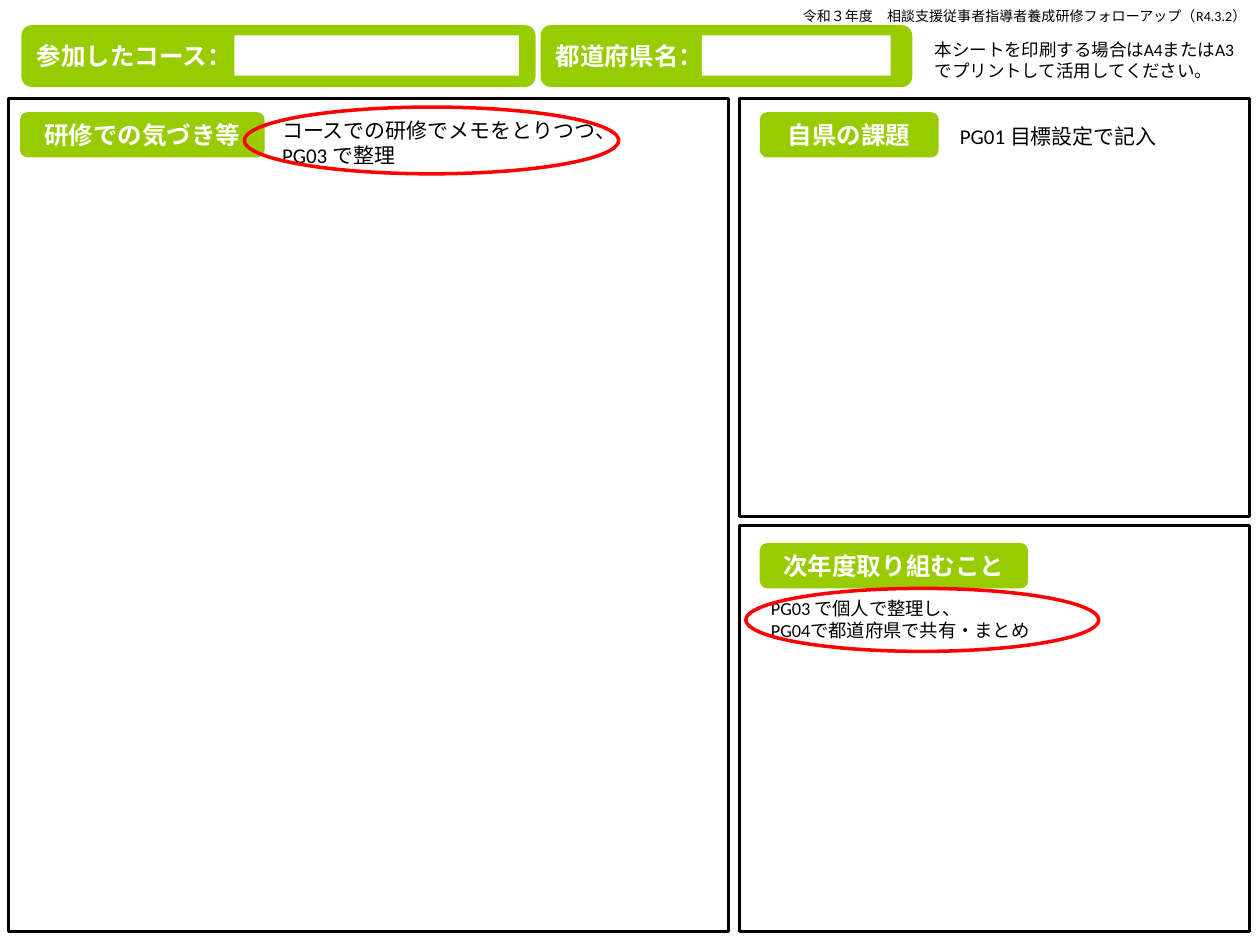
from pptx import Presentation
from pptx.dml.color import RGBColor
from pptx.enum.shapes import MSO_SHAPE as Shape
from pptx.enum.text import MSO_ANCHOR as Anchor, PP_ALIGN as Align
from pptx.util import Inches, Pt

BLACK = RGBColor(0x00, 0x00, 0x00)
WHITE = RGBColor(0xFF, 0xFF, 0xFF)
GREEN = RGBColor(0x99, 0xCC, 0x00)
RED = RGBColor(0xFF, 0x00, 0x00)
FONT = "Calibri"


def write_text(frame, text, size=12, color=BLACK, bold=False,
               align=Align.LEFT, anchor=Anchor.TOP):
    """Fill a text frame, one paragraph per line of text."""
    frame.word_wrap = True
    frame.vertical_anchor = anchor
    for index, line in enumerate(text.split("\n")):
        paragraph = frame.add_paragraph() if index else frame.paragraphs[0]
        paragraph.alignment = align
        run = paragraph.add_run()
        run.text = line
        run.font.name = FONT
        run.font.size = Pt(size)
        run.font.bold = bold
        run.font.color.rgb = color


class Worksheet:
    """Holds the current slide and draws its elements in one style."""

    def __init__(self, slide):
        self.slide = slide

    def shape(self, kind, box, fill=None, line=None, width=1):
        shape = self.slide.shapes.add_shape(kind, *map(Inches, box))
        shape.shadow.inherit = False
        if fill is None:
            shape.fill.background()
        else:
            shape.fill.solid()
            shape.fill.fore_color.rgb = fill
        if line is None:
            shape.line.fill.background()
        else:
            shape.line.color.rgb = line
            shape.line.width = Pt(width)
        return shape

    def panel(self, *box):
        self.shape(Shape.RECTANGLE, box, line=BLACK, width=1.75)

    def label(self, text, *box, align=Align.CENTER):
        shape = self.shape(Shape.ROUNDED_RECTANGLE, box, fill=GREEN)
        write_text(shape.text_frame, text, size=14, color=WHITE, bold=True,
                   align=align, anchor=Anchor.MIDDLE)

    def entry_field(self, text, left, width, blank_left, blank_width):
        """Green bar with a caption and a white blank to fill in."""
        self.label(text, left, 0.2, width, 0.49, align=Align.LEFT)
        self.shape(Shape.RECTANGLE, (blank_left, 0.28, blank_width, 0.32),
                   fill=WHITE)

    def note(self, text, *box, **text_format):
        text_box = self.slide.shapes.add_textbox(*map(Inches, box))
        write_text(text_box.text_frame, text, **text_format)

    def highlight(self, *box):
        self.shape(Shape.OVAL, box, line=RED, width=2)


def main():
    presentation = Presentation()
    presentation.slide_width = Inches(10)
    presentation.slide_height = Inches(7.5)
    slide = presentation.slides.add_slide(presentation.slide_layouts[6])
    sheet = Worksheet(slide)

    sheet.panel(0.07, 0.78, 5.71, 6.61)
    sheet.panel(5.87, 0.78, 4.05, 3.32)
    sheet.panel(5.87, 4.17, 4.05, 3.22)

    sheet.label("研修での気づき等", 0.16, 0.89, 1.94, 0.36)
    sheet.label("自県の課題", 6.03, 0.89, 1.42, 0.36)
    sheet.label("次年度取り組むこと", 6.03, 4.31, 2.13, 0.36)

    sheet.entry_field("参加したコース：", 0.17, 4.08, 1.86, 2.26)
    sheet.entry_field("都道府県名：", 4.29, 2.95, 5.57, 1.5)

    sheet.note("令和３年度　相談支援従事者指導者養成研修フォローアップ（R4.3.2）",
               4.45, 0.01, 5.54, 0.24, size=8, align=Align.RIGHT)
    sheet.note("PG01 目標設定で記入", 7.52, 0.93, 1.94, 0.3)
    sheet.note("コースでの研修でメモをとりつつ、\nPG03 で整理",
               2.14, 0.88, 3.55, 0.5)
    sheet.note("PG03 で個人で整理し、\nPG04で都道府県で共有・まとめ",
               6.02, 4.69, 2.37, 0.45, size=10.5)
    sheet.note("本シートを印刷する場合はA4またはA3でプリントして活用してください。",
               7.32, 0.26, 2.59, 0.44, size=10)

    sheet.highlight(1.94, 0.85, 2.97, 0.53)
    sheet.highlight(5.92, 4.67, 2.8, 0.5)

    presentation.save("out.pptx")


if __name__ == "__main__":
    main()
